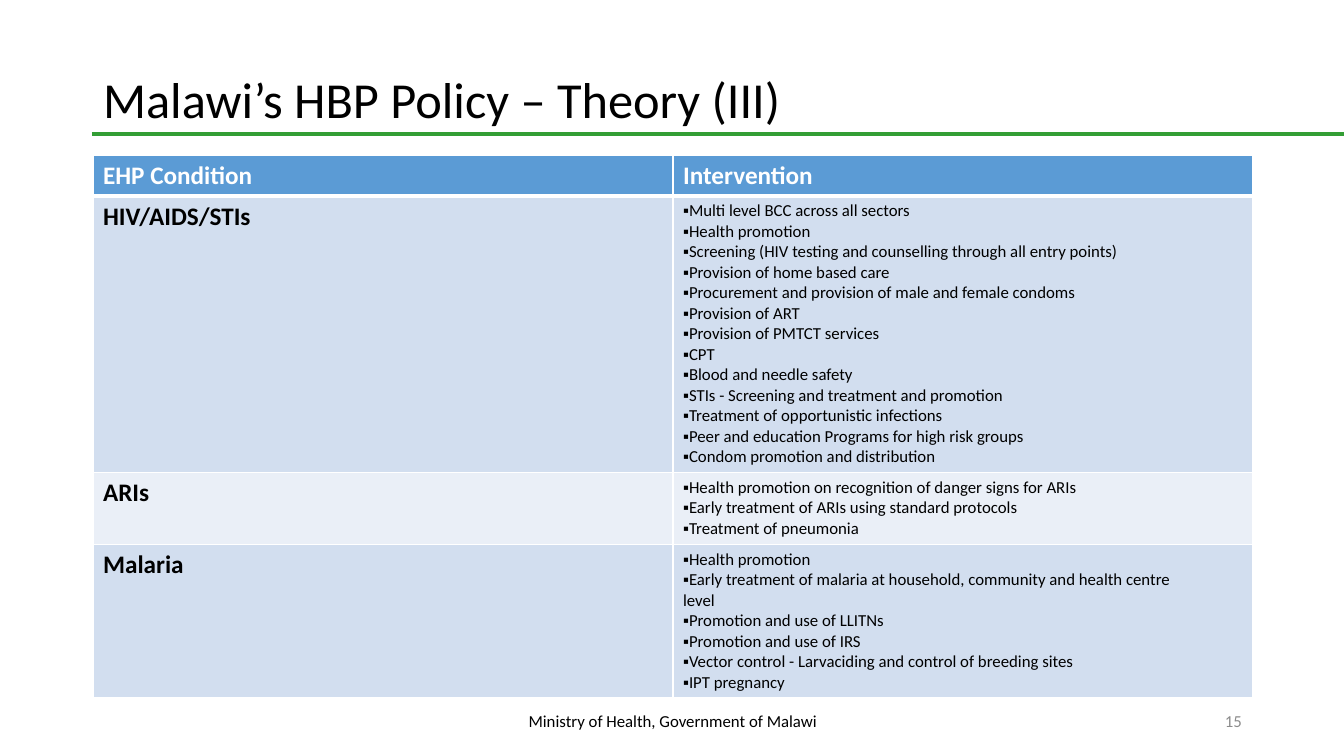
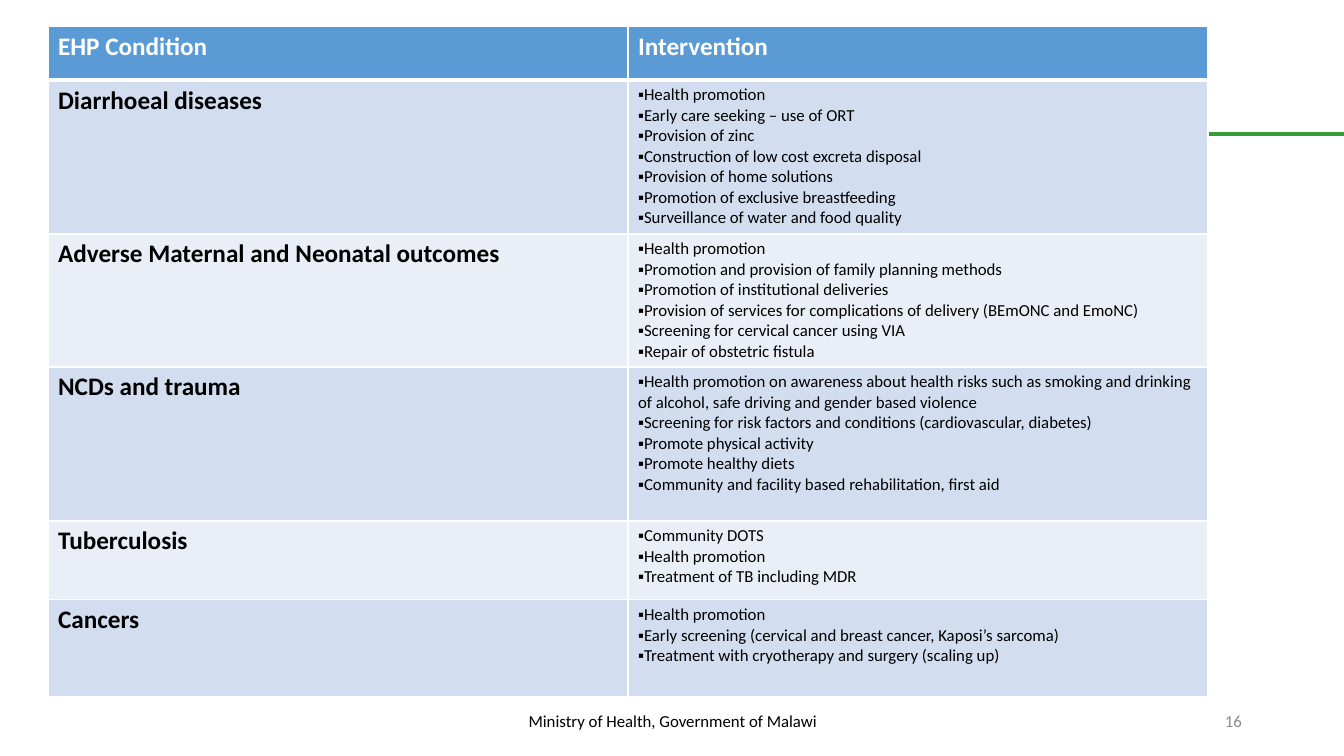
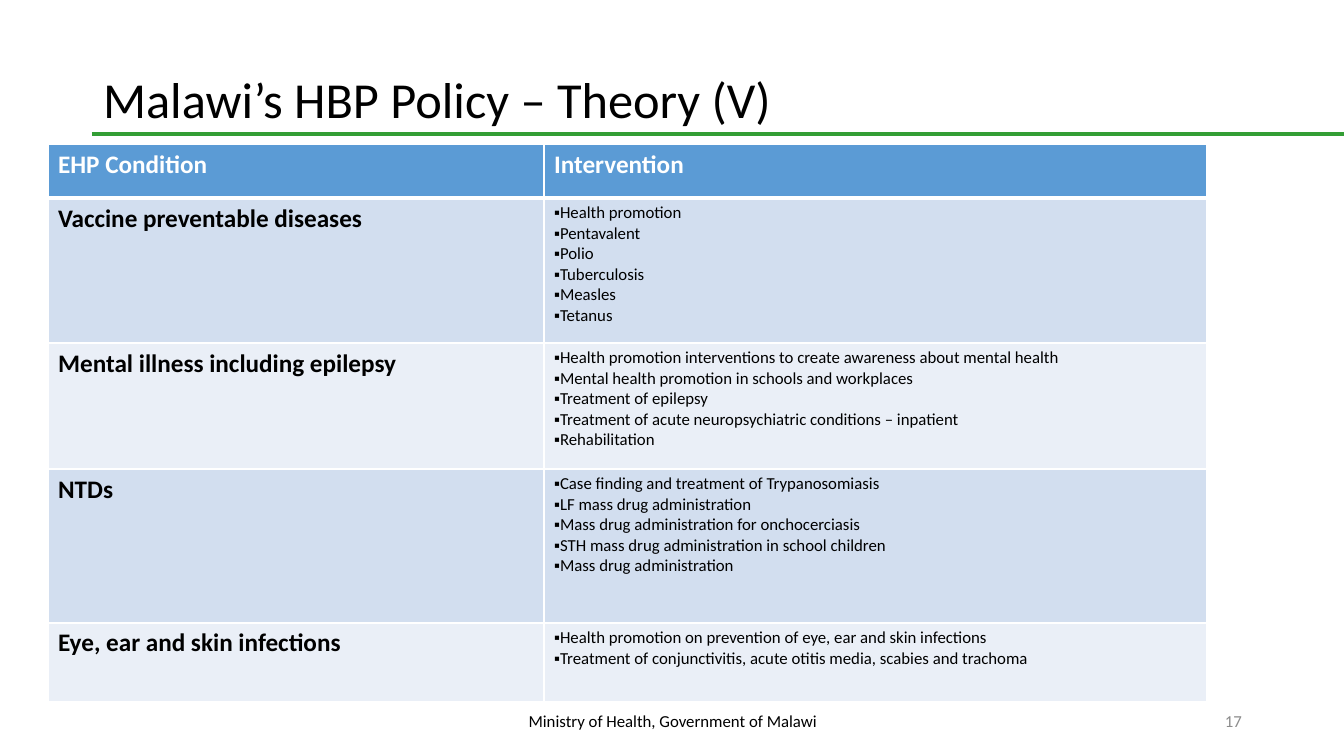
from lxml import etree
from pptx import Presentation
from pptx.dml.color import RGBColor
from pptx.enum.shapes import MSO_CONNECTOR
from pptx.enum.text import MSO_ANCHOR, MSO_AUTO_SIZE, PP_ALIGN
from pptx.oxml.ns import qn
from pptx.util import Pt

LEFT, CENTER, RIGHT = PP_ALIGN.LEFT, PP_ALIGN.CENTER, PP_ALIGN.RIGHT
MIDDLE, BOTTOM = MSO_ANCHOR.MIDDLE, MSO_ANCHOR.BOTTOM
STRAIGHT = MSO_CONNECTOR.STRAIGHT
NO_FIT = MSO_AUTO_SIZE.NONE

BLACK = RGBColor(0x00, 0x00, 0x00)
WHITE = RGBColor(0xFF, 0xFF, 0xFF)
GREY = RGBColor(0x8C, 0x8C, 0x8C)
GREEN = RGBColor(0x33, 0x9E, 0x35)
BLUE = RGBColor(0x5B, 0x9B, 0xD5)
BANDS = (RGBColor(0xD2, 0xDE, 0xEF), RGBColor(0xEA, 0xEF, 0xF7))

FONT = "Calibri"
MARK = "▪"
MARK_FONT = "Arial"
SCALE = 914400 / 100.8
WIDTH, HEIGHT = 1344, 756
TITLE_BOX = (93, 20, 1130, 114)
FOOT_BOX = (446, 701, 454, 40)
PAGE_BOX = (950, 701, 302, 40)
HEADS = ("EHP Condition", "Intervention")
FOOTER = "Ministry of Health, Government of Malawi"

SLIDES = [
    {
        "page": 15,
        "title": "Malawi’s HBP Policy – Theory (III)",
        "spot": (93, 155),
        "cols": (580, 580),
        "rows": (41, 276, 72, 153),
        "data": [
            ("HIV/AIDS/STIs", [
                "Multi level BCC across all sectors",
                "Health promotion",
                "Screening (HIV testing and counselling through all entry points)",
                "Provision of home based care",
                "Procurement and provision of male and female condoms",
                "Provision of ART",
                "Provision of PMTCT services",
                "CPT",
                "Blood and needle safety",
                "STIs - Screening and treatment and promotion",
                "Treatment of opportunistic infections",
                "Peer and education Programs for high risk groups",
                "Condom promotion and distribution",
            ]),
            ("ARIs", [
                "Health promotion on recognition of danger signs for ARIs",
                "Early treatment of ARIs using standard protocols",
                "Treatment of pneumonia",
            ]),
            ("Malaria", [
                "Health promotion",
                "Early treatment of malaria at household, community and health centre\nlevel",
                "Promotion and use of LLITNs",
                "Promotion and use of IRS",
                "Vector control - Larvaciding and control of breeding sites",
                "IPT pregnancy",
            ]),
        ],
    },
    {
        "page": 16,
        "title": None,
        "spot": (48, 26),
        "cols": (580, 580),
        "rows": (54, 154, 133, 154, 79, 97),
        "data": [
            ("Diarrhoeal diseases", [
                "Health promotion",
                "Early care seeking – use of ORT",
                "Provision of zinc",
                "Construction of low cost excreta disposal",
                "Provision of home solutions",
                "Promotion of exclusive breastfeeding",
                "Surveillance of water and food quality",
            ]),
            ("Adverse Maternal and Neonatal outcomes", [
                "Health promotion",
                "Promotion and provision of family planning methods",
                "Promotion of institutional deliveries",
                "Provision of services for complications of delivery (BEmONC and EmoNC)",
                "Screening for cervical cancer using VIA",
                "Repair of obstetric fistula",
            ]),
            ("NCDs and trauma", [
                "Health promotion on awareness about health risks such as smoking and "
                "drinking of alcohol, safe driving and gender based violence",
                "Screening for risk factors and conditions (cardiovascular, diabetes)",
                "Promote physical activity",
                "Promote healthy diets",
                "Community and facility based rehabilitation, first aid",
            ]),
            ("Tuberculosis", [
                "Community DOTS",
                "Health promotion",
                "Treatment of TB including MDR",
            ]),
            ("Cancers", [
                "Health promotion",
                "Early screening (cervical and breast cancer, Kaposi’s sarcoma)",
                "Treatment with cryotherapy and surgery (scaling up)",
            ]),
        ],
    },
    {
        "page": 17,
        "title": "Malawi’s HBP Policy – Theory (V)",
        "spot": (48, 144),
        "cols": (496, 663),
        "rows": (54, 145, 126, 154, 79),
        "data": [
            ("Vaccine preventable diseases", [
                "Health promotion",
                "Pentavalent",
                "Polio",
                "Tuberculosis",
                "Measles",
                "Tetanus",
            ]),
            ("Mental illness including epilepsy", [
                "Health promotion interventions to create awareness about mental health",
                "Mental health promotion in schools and workplaces",
                "Treatment of epilepsy",
                "Treatment of acute neuropsychiatric conditions – inpatient",
                "Rehabilitation",
            ]),
            ("NTDs", [
                "Case finding and treatment of Trypanosomiasis",
                "LF mass drug administration",
                "Mass drug administration for onchocerciasis",
                "STH mass drug administration in school children",
                "Mass drug administration",
            ]),
            ("Eye, ear and skin infections", [
                "Health promotion on prevention of eye, ear and skin infections",
                "Treatment of conjunctivitis, acute otitis media, scabies and trachoma",
            ]),
        ],
    },
]


def px(size):
    return round(size * SCALE)


def style(run, size, color=BLACK, bold=False, face=FONT):
    run.font.name = face
    run.font.size = Pt(size)
    run.font.bold = bold
    run.font.color.rgb = color


def write(frame, text, size, color, align, anchor):
    frame.text = text
    frame.word_wrap = True
    frame.auto_size = NO_FIT
    frame.vertical_anchor = anchor
    para = frame.paragraphs[0]
    para.alignment = align
    style(para.runs[0], size, color)
    return para


def add_rule(slide):
    rule = slide.shapes.add_connector(STRAIGHT, px(92), px(134), px(WIDTH), px(134))
    rule.line.color.rgb = GREEN
    rule.line.width = Pt(2.25)
    etree.SubElement(rule.element.spPr, qn("a:effectLst"))


def add_title(slide, text, box):
    title = slide.shapes.title
    title.left, title.top, title.width, title.height = map(px, box)
    para = write(title.text_frame, text, 36, BLACK, LEFT, BOTTOM)
    para.line_spacing = 0.9


def add_note(slide, text, box, color, align):
    note = slide.shapes.add_textbox(*map(px, box))
    write(note.text_frame, text, 12, color, align, MIDDLE)


def paint(cell, color, top, bottom):
    props = cell._tc.get_or_add_tcPr()
    for side, width in (("L", 1), ("R", 1), ("T", top), ("B", bottom)):
        edge = etree.SubElement(props, qn(f"a:ln{side}"), w=str(Pt(width)))
        fill = etree.SubElement(edge, qn("a:solidFill"))
        etree.SubElement(fill, qn("a:srgbClr"), val=str(WHITE))
    cell.fill.solid()
    cell.fill.fore_color.rgb = color


def label(cell, text, color):
    cell.text_frame.text = text
    style(cell.text_frame.paragraphs[0].runs[0], 18, color, True)


def add_items(frame, items):
    for i, item in enumerate(items):
        para = frame.add_paragraph() if i else frame.paragraphs[0]
        para.text = MARK
        style(para.runs[0], 12, face=MARK_FONT)
        for j, line in enumerate(item.split("\n")):
            if j:
                para.add_line_break()
            run = para.add_run()
            run.text = line
            style(run, 12)


def add_grid(slide, spot, cols, rows, data):
    box = (*spot, sum(cols), sum(rows))
    table = slide.shapes.add_table(len(rows), len(cols), *map(px, box)).table
    for col, width in zip(table.columns, cols):
        col.width = px(width)
    for row, height in zip(table.rows, rows):
        row.height = px(height)
    for c, head in enumerate(HEADS):
        paint(table.cell(0, c), BLUE, 1, 3)
        label(table.cell(0, c), head, WHITE)
    for r, (name, items) in enumerate(data, 1):
        for c in range(len(cols)):
            paint(table.cell(r, c), BANDS[(r - 1) % 2], 3 if r == 1 else 1, 1)
        label(table.cell(r, 0), name, BLACK)
        add_items(table.cell(r, 1).text_frame, items)


def add_page(deck, page, title, spot, cols, rows, data):
    slide = deck.slides.add_slide(deck.slide_layouts[5 if title else 6])
    add_rule(slide)
    if title:
        add_title(slide, title, TITLE_BOX)
    add_grid(slide, spot, cols, rows, data)
    add_note(slide, FOOTER, FOOT_BOX, BLACK, CENTER)
    add_note(slide, str(page), PAGE_BOX, GREY, RIGHT)


def main():
    deck = Presentation()
    deck.slide_width, deck.slide_height = px(WIDTH), px(HEIGHT)
    for entry in SLIDES:
        add_page(deck, **entry)
    deck.save("out.pptx")


if __name__ == "__main__":
    main()
